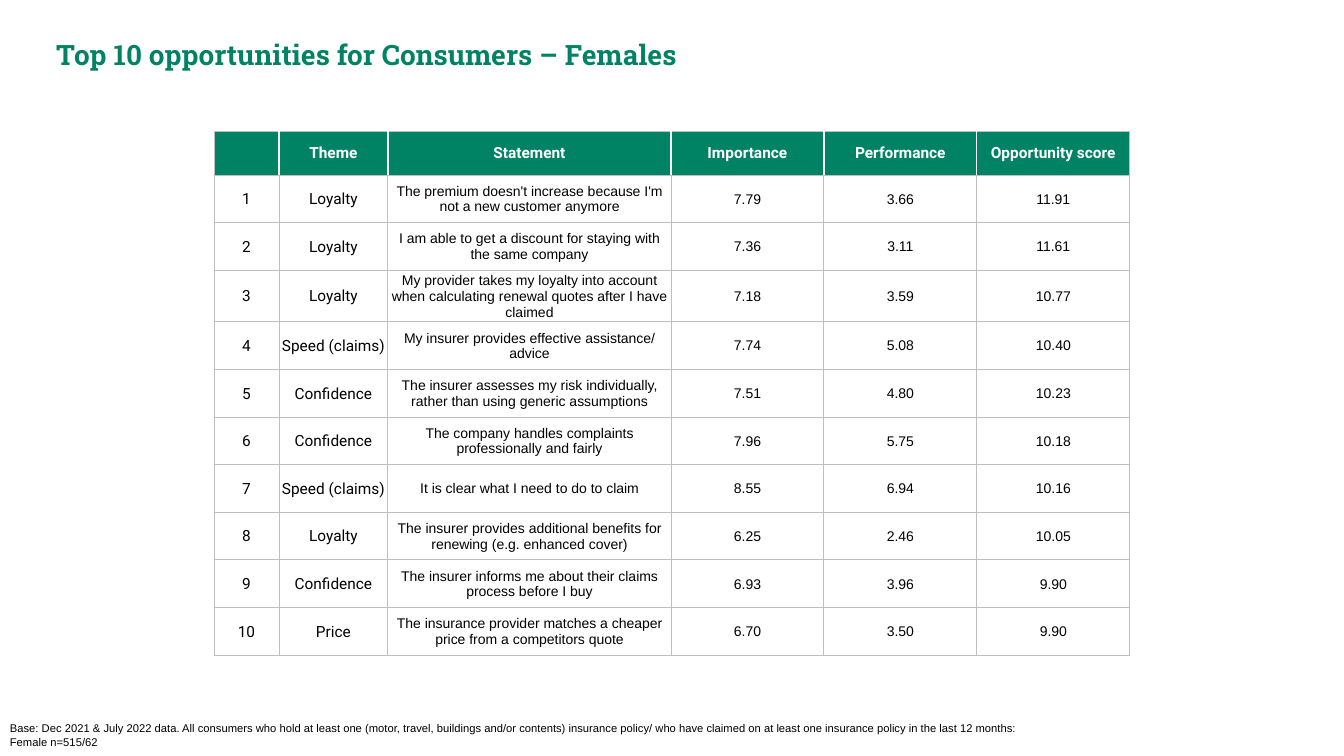
from dataclasses import astuple, dataclass

from lxml.etree import SubElement
from pptx import Presentation
from pptx.dml.color import RGBColor
from pptx.enum.text import MSO_ANCHOR, PP_ALIGN
from pptx.oxml.ns import qn
from pptx.slide import Slide
from pptx.table import _Cell
from pptx.text.text import TextFrame
from pptx.util import Inches, Pt

WIDTH = Inches(13.33)
HEIGHT = Inches(7.5)
GREEN = "008265"
GREY = "BFBFBF"
WHITE = "FFFFFF"
BLACK = "000000"


@dataclass(frozen=True)
class Style:
    font: str
    size: float
    color: str = BLACK
    bold: bool = False
    align: PP_ALIGN = PP_ALIGN.CENTER


@dataclass(frozen=True)
class Box:
    left: float
    top: float
    width: float
    height: float


@dataclass(frozen=True)
class Opportunity:
    theme: str
    statement: str
    importance: str
    performance: str
    score: str


TITLE = Style("Roboto Slab", 20, GREEN, True, PP_ALIGN.LEFT)
HEADER = Style("Roboto", 11, WHITE, True)
LABEL = Style("Roboto", 11)
DETAIL = Style("Arial", 10)
FOOTNOTE = Style("Arial", 8, align=PP_ALIGN.LEFT)

HEADINGS = ["", "Theme", "Statement", "Importance", "Performance", "Opportunity score"]
COLUMN_SHARES = [4.84, 8.11, 21.06] + [11.38] * 3
HEADER_SHARE = 5.8
ROW_SHARE = 6.3
OPPORTUNITIES = [
    Opportunity("Loyalty", "The premium doesn't increase because I'm not a new customer anymore",
                "7.79", "3.66", "11.91"),
    Opportunity("Loyalty", "I am able to get a discount for staying with the same company",
                "7.36", "3.11", "11.61"),
    Opportunity("Loyalty", "My provider takes my loyalty into account when calculating "
                "renewal quotes after I have claimed", "7.18", "3.59", "10.77"),
    Opportunity("Speed (claims)", "My insurer provides effective assistance/ advice",
                "7.74", "5.08", "10.40"),
    Opportunity("Confidence", "The insurer assesses my risk individually, rather than using "
                "generic assumptions", "7.51", "4.80", "10.23"),
    Opportunity("Confidence", "The company handles complaints professionally and fairly",
                "7.96", "5.75", "10.18"),
    Opportunity("Speed (claims)", "It is clear what I need to do to claim",
                "8.55", "6.94", "10.16"),
    Opportunity("Loyalty", "The insurer provides additional benefits for renewing "
                "(e.g. enhanced cover)", "6.25", "2.46", "10.05"),
    Opportunity("Confidence", "The insurer informs me about their claims process before I buy",
                "6.93", "3.96", "9.90"),
    Opportunity("Price", "The insurance provider matches a cheaper price from a competitors quote",
                "6.70", "3.50", "9.90"),
]


def across(share: float) -> int:
    return round(WIDTH * share / 100)


def down(share: float) -> int:
    return round(HEIGHT * share / 100)


def rgb(color: str) -> RGBColor:
    return RGBColor.from_string(color)


def write(tf: TextFrame, lines: list[str], style: Style) -> None:
    tf.word_wrap = True
    for i, line in enumerate(lines):
        p = tf.paragraphs[0] if i == 0 else tf.add_paragraph()
        p.text = line
        p.alignment = style.align
        p.font.name = style.font
        p.font.size = Pt(style.size)
        p.font.bold = style.bold
        p.font.color.rgb = rgb(style.color)


def add_text(s: Slide, box: Box, lines: list[str], style: Style) -> None:
    sp = s.shapes.add_textbox(across(box.left), down(box.top), across(box.width), down(box.height))
    write(sp.text_frame, lines, style)


def add_border(cell: _Cell, side: str, color: str, width: float) -> None:
    ln = SubElement(cell._tc.get_or_add_tcPr(), qn(f"a:{side}"), w=str(Pt(width)))
    SubElement(SubElement(ln, qn("a:solidFill")), qn("a:srgbClr"), val=color)


def fill_cell(cell: _Cell, text: str, style: Style, fill: str, white_sides: set[str]) -> None:
    cell.margin_left = cell.margin_top = cell.margin_right = Inches(0.01)
    cell.margin_bottom = 0
    cell.vertical_anchor = MSO_ANCHOR.MIDDLE
    for side in ("lnL", "lnR", "lnT", "lnB"):
        color, width = (WHITE, 1) if side in white_sides else (GREY, 0.75)
        add_border(cell, side, color, width)
    cell.fill.solid()
    cell.fill.fore_color.rgb = rgb(fill)
    write(cell.text_frame, [text], style)


def add_opportunity_table(s: Slide, left: float, top: float) -> None:
    row_shares = [HEADER_SHARE] + [ROW_SHARE] * len(OPPORTUNITIES)
    table = s.shapes.add_table(
        len(row_shares), len(COLUMN_SHARES), across(left), down(top),
        across(sum(COLUMN_SHARES)), down(sum(row_shares)),
    ).table
    table.horz_banding = False
    for column, share in zip(table.columns, COLUMN_SHARES):
        column.width = across(share)
    for row, share in zip(table.rows, row_shares):
        row.height = down(share)

    last = len(HEADINGS) - 1
    for c, heading in enumerate(HEADINGS):
        white_sides = ({"lnL"} if c > 0 else set()) | ({"lnR"} if c < last else set())
        fill_cell(table.cell(0, c), heading, HEADER, GREEN, white_sides)
    for r, opportunity in enumerate(OPPORTUNITIES, start=1):
        for c, text in enumerate((str(r), *astuple(opportunity))):
            fill_cell(table.cell(r, c), text, LABEL if c < 2 else DETAIL, WHITE, set())


def main() -> None:
    prs = Presentation()
    prs.slide_width, prs.slide_height = WIDTH, HEIGHT
    s = prs.slides.add_slide(prs.slide_layouts[6])
    add_text(s, Box(3.45, 4.27, 92.12, 5.87),
             ["Top 10 opportunities for Consumers – Females"], TITLE)
    add_opportunity_table(s, 15.92, 17.36)
    add_text(s, Box(0, 94.8, 83.72, 5.2), [
        "Base: Dec 2021 & July 2022 data. All consumers who hold at least one (motor, travel, "
        "buildings and/or contents) insurance policy/ who have claimed on at least one "
        "insurance policy in the last 12 months:",
        "Female n=515/62",
    ], FOOTNOTE)
    prs.save("out.pptx")


if __name__ == "__main__":
    main()
